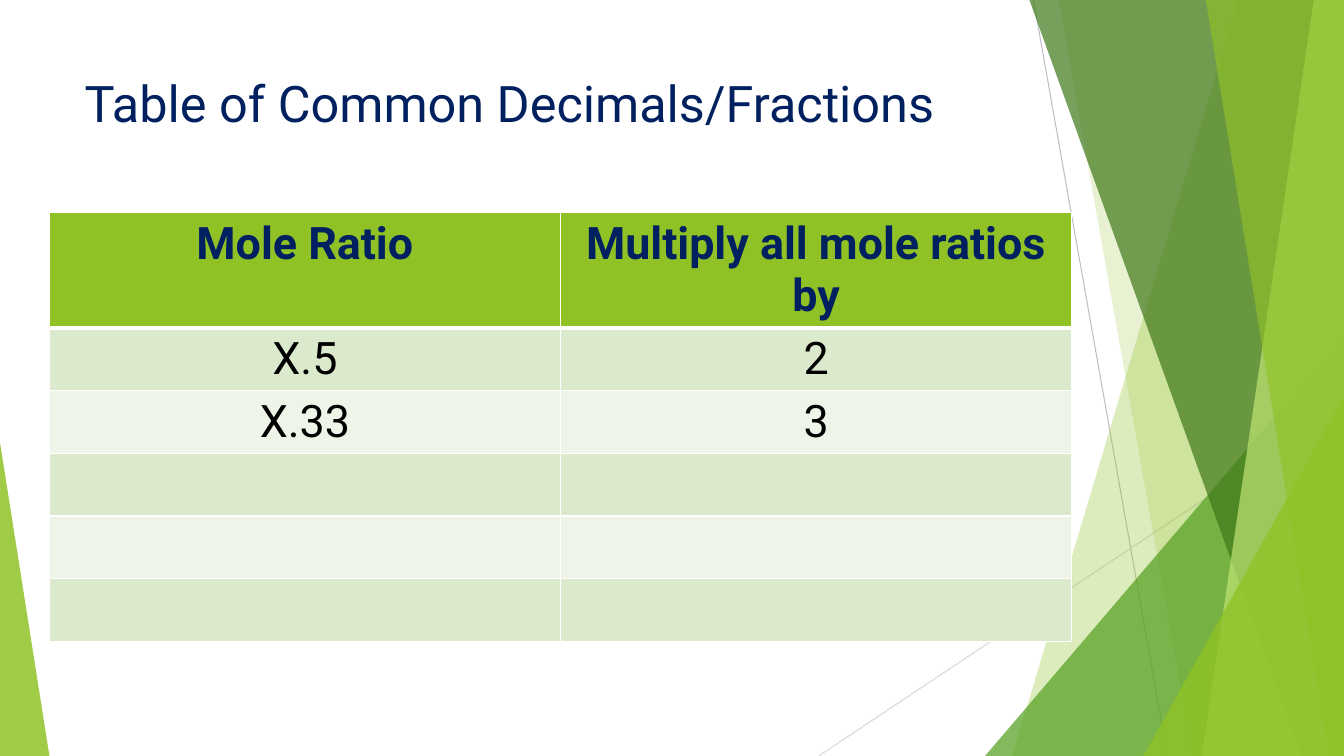
from lxml import etree
from pptx import Presentation
from pptx.dml.color import RGBColor
from pptx.enum.shapes import MSO_CONNECTOR, MSO_SHAPE
from pptx.enum.text import MSO_ANCHOR, PP_ALIGN
from pptx.oxml.ns import qn
from pptx.util import Inches, Pt

TRIANGLE = MSO_SHAPE.ISOSCELES_TRIANGLE
STRAIGHT = MSO_CONNECTOR.STRAIGHT
TOP = MSO_ANCHOR.TOP
LEFT, CENTER = PP_ALIGN.LEFT, PP_ALIGN.CENTER

FONT = "Roboto"
NAVY = RGBColor(0x00, 0x20, 0x60)
BLACK = RGBColor(0x00, 0x00, 0x00)
WHITE = RGBColor(0xFF, 0xFF, 0xFF)
LIME = RGBColor(0x90, 0xC2, 0x26)
GREEN = RGBColor(0x54, 0xA0, 0x21)
FOREST = RGBColor(0x3F, 0x78, 0x19)
PALE_LIME = RGBColor(0xC0, 0xE4, 0x74)
GRAY = RGBColor(0xBF, 0xBF, 0xBF)
LIGHT_GRAY = RGBColor(0xD9, 0xD9, 0xD9)
BANDS = (RGBColor(0xDB, 0xE9, 0xCD), RGBColor(0xEE, 0xF4, 0xE8))

SLIDE_WIDTH, SLIDE_HEIGHT = 13.33, 7.5
TITLE = "Table of Common Decimals/Fractions"
HEADER = ("Mole Ratio", "Multiply all mole ratios by")
RATIOS = (("X.5", "2"), ("X.33", "3"), ("", ""), ("", ""), ("", ""))


def write_text(text_frame, text, size, color, bold=False, align=LEFT):
    """Put one formatted paragraph into a text frame."""
    paragraph = text_frame.paragraphs[0]
    paragraph.alignment = align
    if text:
        run = paragraph.add_run()
        run.text = text
        run.font.name = FONT
        run.font.size = Pt(size)
        run.font.bold = bold
        run.font.color.rgb = color


def paint(shape, color, opacity):
    """Give a shape a translucent fill without outline or shadow."""
    shape.shadow.inherit = False
    shape.line.fill.background()
    shape.fill.solid()
    shape.fill.fore_color.rgb = color
    color_element = shape.fill._xPr.find(".//" + qn("a:srgbClr"))
    etree.SubElement(color_element, qn("a:alpha"), val=str(opacity * 1000))


def add_line(slide, start, end, color):
    """Draw a thin straight line between two points."""
    line = slide.shapes.add_connector(STRAIGHT, *map(Inches, start + end))
    line.line.color.rgb = color
    line.line.width = Pt(0.75)
    etree.SubElement(line._element.spPr, qn("a:effectLst"))


def add_triangle(slide, left, top, width, height, peak, color, opacity):
    """Draw a translucent triangle whose peak sits at a share of its width."""
    triangle = slide.shapes.add_shape(
        TRIANGLE, Inches(left), Inches(top), Inches(width), Inches(height))
    triangle.adjustments[0] = peak
    paint(triangle, color, opacity)


def add_facet(slide, right, top, bottom, upper, lower, color, opacity):
    """Draw a full-height facet reaching the given distances from the right."""
    builder = slide.shapes.build_freeform(Inches(right - upper), Inches(top))
    corners = ((right, top), (right, bottom), (right - lower, bottom))
    builder.add_line_segments([(Inches(x), Inches(y)) for x, y in corners])
    paint(builder.convert_to_shape(), color, opacity)


def add_facets(slide, left, top, width, height):
    """Decorate the left and right edges of the box with facets."""
    right, bottom = left + width, top + height
    add_line(slide, (right - 3.08, top), (right - 1.75, bottom), GRAY)
    add_line(slide, (right, top + 4.03), (right - 5.21, bottom), LIGHT_GRAY)

    def corner(base, rise, color, opacity):
        """Draw a triangle in the lower right corner."""
        add_triangle(slide, right - base, bottom - rise, base, rise, 1, color, opacity)

    def facet(upper, lower, color, opacity):
        """Draw a facet on the right edge."""
        add_facet(slide, right, top, bottom, upper, lower, color, opacity)

    facet(1.05, 3.29, LIME, 30)
    facet(2.83, 1.5, LIME, 20)
    corner(3.56, 4.17, GREEN, 72)
    facet(3.12, 0.42, FOREST, 70)
    facet(0.3, 1.41, PALE_LIME, 70)
    facet(1.37, 0.15, LIME, 65)
    corner(1.99, 3.57, LIME, 80)
    add_triangle(slide, left, bottom - 3.11, 0.49, 3.11, 0, LIME, 85)


def add_title(slide, left, top, width, height):
    """Place and format the title placeholder."""
    title = slide.shapes.title
    title.left, title.top = Inches(left), Inches(top)
    title.width, title.height = Inches(width), Inches(height)
    title.text_frame.vertical_anchor = TOP
    title.text_frame.word_wrap = True
    write_text(title.text_frame, TITLE, 36, NAVY)


def format_cell(cell, fill, bottom_width, top_width):
    """Give a cell white borders and a solid fill."""
    properties = cell._tc.get_or_add_tcPr()
    widths = {"lnL": 1, "lnR": 1, "lnT": top_width, "lnB": bottom_width}
    for side, width in widths.items():
        border = etree.SubElement(properties, qn("a:" + side), w=str(Pt(width)))
        solid = etree.SubElement(border, qn("a:solidFill"))
        etree.SubElement(solid, qn("a:srgbClr"), val=str(WHITE))
    cell.fill.solid()
    cell.fill.fore_color.rgb = fill


def add_ratio_table(slide, left, top, width, height):
    """Fill the box with the table of mole ratios and multipliers."""
    rows = (HEADER,) + RATIOS
    header_height = 1.14
    table = slide.shapes.add_table(
        len(rows), len(HEADER), Inches(left), Inches(top),
        Inches(width), Inches(height)).table
    for row_index, texts in enumerate(rows):
        is_header = row_index == 0
        row_height = header_height if is_header else (height - header_height) / len(RATIOS)
        table.rows[row_index].height = Inches(row_height)
        fill = LIME if is_header else BANDS[(row_index - 1) % 2]
        for column_index, text in enumerate(texts):
            cell = table.cell(row_index, column_index)
            format_cell(cell, fill, 3 if is_header else 1, 3 if row_index == 1 else 1)
            write_text(cell.text_frame, text, 32, NAVY if is_header else BLACK,
                       bold=is_header, align=CENTER)


def main():
    """Build the slide and save it."""
    presentation = Presentation()
    presentation.slide_width = Inches(SLIDE_WIDTH)
    presentation.slide_height = Inches(SLIDE_HEIGHT)
    slide = presentation.slides.add_slide(presentation.slide_layouts[5])
    add_facets(slide, 0, 0, SLIDE_WIDTH, SLIDE_HEIGHT)
    add_ratio_table(slide, 0.49, 2.11, 10.14, 4.25)
    add_title(slide, 0.74, 0.67, 9.4, 1.44)
    presentation.save("out.pptx")


if __name__ == "__main__":
    main()
